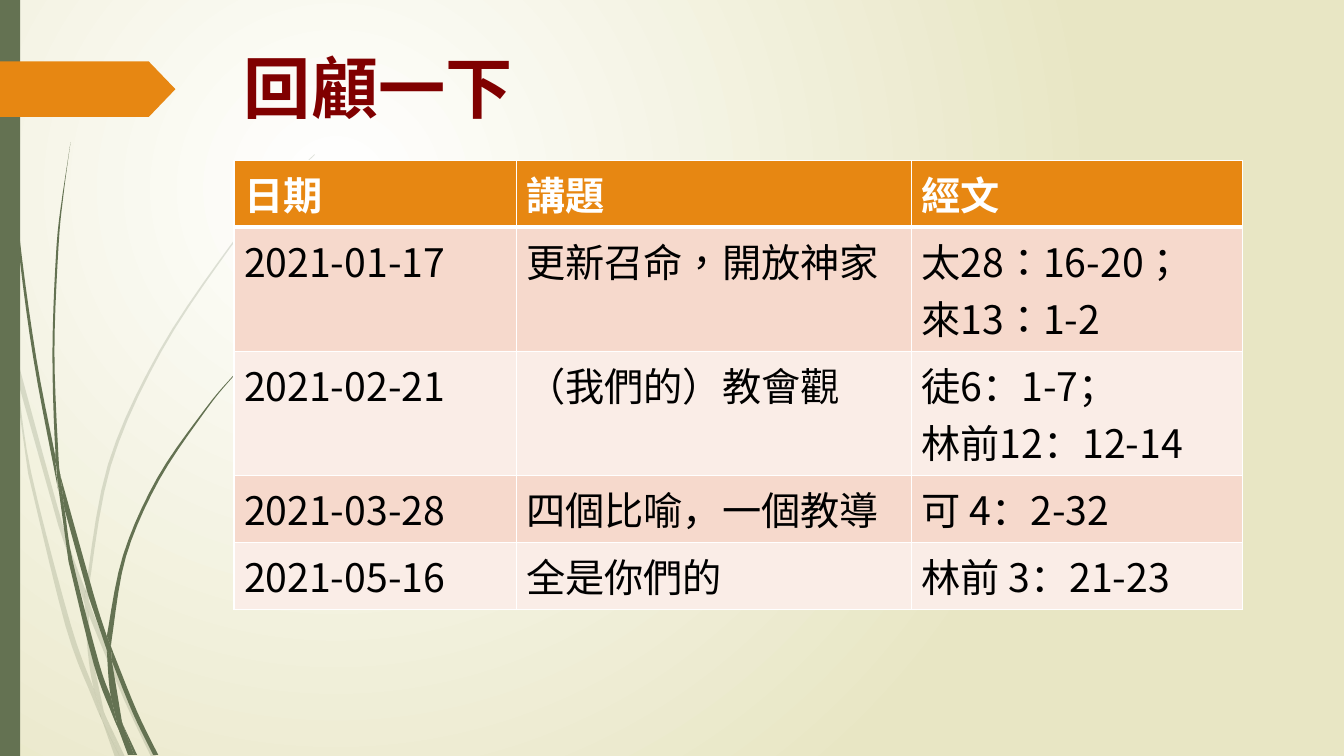
import pptx
import pptx.util
import pptx.dml.color
import pptx.enum.lang
import pptx.enum.shapes
import pptx.oxml.ns
from lxml import etree

RGBColor = pptx.dml.color.RGBColor
WHITE = RGBColor(0xFF, 0xFF, 0xFF)
BLACK = RGBColor(0x00, 0x00, 0x00)
SAND = RGBColor(0xE8, 0xE6, 0xC4)
MOSS = RGBColor(0x64, 0x72, 0x52)
ORANGE = RGBColor(0xE7, 0x87, 0x12)
MAROON = RGBColor(0x80, 0x00, 0x00)
ROSE = RGBColor(0xF6, 0xD9, 0xCC)
BLUSH = RGBColor(0xFA, 0xED, 0xE7)

# The slide is a fine grid of 1333 columns by 750 rows
WIDTH, HEIGHT = pptx.util.Inches(13.33), pptx.util.Inches(7.5)
COLUMNS, ROWS = 1333, 750

LATIN, CJK = "TeX Gyre Adventor", "Noto Sans CJK TC"
TITLE_FONT = {"size": pptx.util.Pt(48), "name": LATIN, "bold": True}
HEADER_FONT = {"size": pptx.util.Pt(28), "name": LATIN, "bold": True}
BODY_FONT = {"size": pptx.util.Pt(28), "name": CJK, "bold": False}
TAIWAN_FONT = {**BODY_FONT, "language_id": pptx.enum.lang.MSO_LANGUAGE_ID.TRADITIONAL_CHINESE}

SERMONS = [
    ("日期", "講題", "經文"),
    ("2021-01-17", "更新召命，開放神家", "太28：16-20；\n來13：1-2"),
    ("2021-02-21", "（我們的）教會觀", "徒6：1-7；\n林前12：12-14"),
    ("2021-03-28", "四個比喻，一個教導", "可 4：2-32"),
    ("2021-05-16", "全是你們的", "林前 3：21-23"),
]
SERMON_COLUMNS, LINE_ROWS, PADDING_ROWS = (280, 392, 328), 56.5, 10

# Each segment of a blade of grass: one edge, then the edge leading back
PALE_GRASS = [
    ([(11, 350), (9, 322), (0, 282)], [(0, 299), (10, 344)]),
    ([(58, 522), (84, 599)], [(85, 586), (62, 520), (14, 345)], [(17, 376), (58, 522)]),
    ([(92, 607), (88, 596)], [(88, 610), (123, 694), (150, 751)], [(155, 751), (127, 692), (92, 607)]),
    ([(119, 751), (124, 751)], [(105, 711), (119, 751)]),
    ([(93, 683), (70, 619), (31, 469), (17, 376), (11, 350)],
     [(28, 470), (65, 621), (92, 693), (101, 714)], [(99, 707), (93, 683)]),
    ([(84, 599), (87, 646), (93, 683), (105, 711)], [(103, 706), (91, 646), (88, 610), (88, 608)]),
    ([(88, 584), (110, 462), (160, 349), (229, 245), (268, 198), (290, 175), (312, 154)],
     [(312, 153), (289, 175), (268, 197), (228, 244), (158, 348), (107, 461), (85, 584), (85, 586)],
     [(88, 596), (88, 584)]),
    ([(101, 714), (114, 751)], [(119, 751), (101, 714)]),
    ([(88, 608), (88, 610)], [(88, 596), (85, 586)], [(84, 599), (88, 608)]),
    ([(96, 692), (93, 683)], [(99, 707), (101, 714), (119, 751)], [(105, 711), (96, 692)]),
]
DARK_GRASS = [
    ([(7, 110), (17, 233), (33, 355), (56, 477), (57, 481)],
     [(55, 457), (55, 453), (36, 355), (19, 232), (8, 109), (5, 48), (4, 0)], [(3, 0), (4, 48), (7, 110)]),
    ([(88, 592), (106, 645)], [(106, 631), (93, 590), (60, 472)], [(64, 505), (88, 592)]),
    ([(113, 649), (110, 641)], [(111, 656), (132, 708), (152, 749)], [(157, 749), (136, 706), (113, 649)]),
    ([(110, 691), (98, 657), (72, 556), (64, 505), (57, 477)],
     [(68, 557), (93, 659), (111, 708), (117, 722)], [(116, 717), (110, 691)]),
    ([(60, 472), (58, 453), (54, 349), (58, 245), (63, 193), (70, 141)],
     [(62, 193), (56, 245), (52, 349), (55, 449), (60, 472)]),
    ([(133, 749), (136, 749)], [(122, 719), (133, 749)]),
    ([(57, 477), (64, 505)], [(60, 472), (55, 449)], [(55, 453), (57, 477)]),
    ([(111, 633), (125, 552), (158, 476), (205, 406), (231, 374), (245, 359), (261, 344)],
     [(260, 344), (245, 358), (231, 373), (204, 405), (156, 474), (122, 551), (106, 631)],
     [(110, 641), (111, 633)]),
    ([(117, 722), (127, 749)], [(131, 749), (117, 722)]),
    ([(106, 645), (110, 691), (122, 719)], [(121, 716), (111, 656), (109, 651), (106, 645)]),
    ([(106, 645), (111, 656)], [(110, 641), (106, 631)]),
    ([(116, 706), (110, 691)], [(116, 717), (117, 722), (130, 749)], [(133, 749), (122, 719), (116, 706)]),
]


def col(count):
    return round(WIDTH * count / COLUMNS)


def row(count):
    return round(HEIGHT * count / ROWS)


def place(left, top, width, height):
    return col(left), row(top), col(width), row(height)


def add_xml(parent, tag, **values):
    return etree.SubElement(parent, pptx.oxml.ns.qn(tag), values)


def write(frame, text, color, values):
    for index, line in enumerate(text.split("\n")):
        paragraph = frame.paragraphs[0] if index == 0 else frame.add_paragraph()
        run = paragraph.add_run()
        run.text = line
        for attribute, value in values.items():
            setattr(run.font, attribute, value)
        run.font.color.rgb = color
        add_xml(run.font._element, "a:ea", typeface=CJK)


def paint(shape, color, opacity=100):
    shape.shadow.inherit = False
    shape.fill.solid()
    shape.fill.fore_color.rgb = color
    shape.line.fill.background()
    if opacity < 100:
        tint = next(shape.element.iter(pptx.oxml.ns.qn("a:srgbClr")))
        add_xml(tint, "a:alpha", val=str(opacity * 1000))


def smooth_edge(points, steps=5):
    """Catmull-Rom curve through the points."""
    padded = [points[0], *points, points[-1]]
    curve = []
    for a, b, c, d in zip(padded, padded[1:], padded[2:], padded[3:]):
        for t in (step / steps for step in range(steps)):
            curve.append(tuple(
                q + t * (r - p) / 2 + t * t * (2 * p - 5 * q + 4 * r - s) / 2
                + t ** 3 * (3 * q - p - 3 * r + s) / 2
                for p, q, r, s in zip(a, b, c, d)))
    return curve + [points[-1]]


def add_blade(slide, edges, opacity):
    outline = [(col(x), row(y)) for edge in edges for x, y in smooth_edge(edge)]
    builder = slide.shapes.build_freeform(*outline[0])
    builder.add_line_segments(outline[1:], close=True)
    paint(builder.convert_to_shape(), MOSS, opacity)


def add_background(slide):
    fill = slide.background.fill
    fill.gradient()
    for stop, color, position in zip(fill.gradient_stops, (WHITE, SAND), (0, 1)):
        stop.color.rgb = color
        stop.position = position
    gradient = next(slide.element.iter(pptx.oxml.ns.qn("a:gradFill")))
    gradient.remove(gradient.find(pptx.oxml.ns.qn("a:lin")))
    circle = add_xml(gradient, "a:path", path="circle")
    add_xml(circle, "a:fillToRect", l="50000", t="50000", r="100000", b="100000")


def add_panel(slide, kind, color, area):
    panel = slide.shapes.add_shape(kind, *place(*area))
    paint(panel, color)
    return panel


def add_title(slide, text):
    frame = slide.shapes.add_textbox(*place(232, 41, 1026, 103)).text_frame
    frame.word_wrap = True
    write(frame, text, MAROON, TITLE_FONT)


def add_borders(cell, bottom):
    for side, points in {"L": 1, "R": 1, "T": 1, "B": bottom}.items():
        border = add_xml(cell._tc.get_or_add_tcPr(), f"a:ln{side}", w=str(pptx.util.Pt(points)))
        add_xml(add_xml(border, "a:solidFill"), "a:srgbClr", val=str(WHITE))


def add_sermons(slide):
    heights = [PADDING_ROWS + LINE_ROWS * len(sermon[-1].split("\n")) for sermon in SERMONS]
    area = place(232, 159, sum(SERMON_COLUMNS), sum(heights))
    sermons = slide.shapes.add_table(len(SERMONS), len(SERMON_COLUMNS), *area).table
    for column, width in zip(sermons.columns, SERMON_COLUMNS):
        column.width = col(width)
    for r, sermon in enumerate(SERMONS):
        sermons.rows[r].height = row(heights[r])
        header = r == 0
        body_font = TAIWAN_FONT if r == 1 else BODY_FONT
        for c, text in enumerate(sermon):
            cell = sermons.cell(r, c)
            add_borders(cell, 3 if header else 1)
            cell.fill.solid()
            cell.fill.fore_color.rgb = ORANGE if header else (BLUSH, ROSE)[r % 2]
            write(cell.text_frame, text, WHITE if header else BLACK, HEADER_FONT if header else body_font)


def main():
    deck = pptx.Presentation()
    deck.slide_width, deck.slide_height = WIDTH, HEIGHT
    slide = deck.slides.add_slide(deck.slide_layouts[6])
    add_background(slide)

    # Grass and side decoration
    for grass, opacity in ((PALE_GRASS, 20), (DARK_GRASS, 100)):
        for edges in grass:
            add_blade(slide, edges, opacity)
    kinds = pptx.enum.shapes.MSO_SHAPE
    add_panel(slide, kinds.RECTANGLE, MOSS, (0, 0, 20, ROWS))
    arrow = add_panel(slide, kinds.PENTAGON, ORANGE, (0, 61, 174, 55))
    arrow.adjustments[0] = 0.48

    # Content
    add_title(slide, "回顧一下")
    add_sermons(slide)
    deck.save("out.pptx")


if __name__ == "__main__":
    main()
